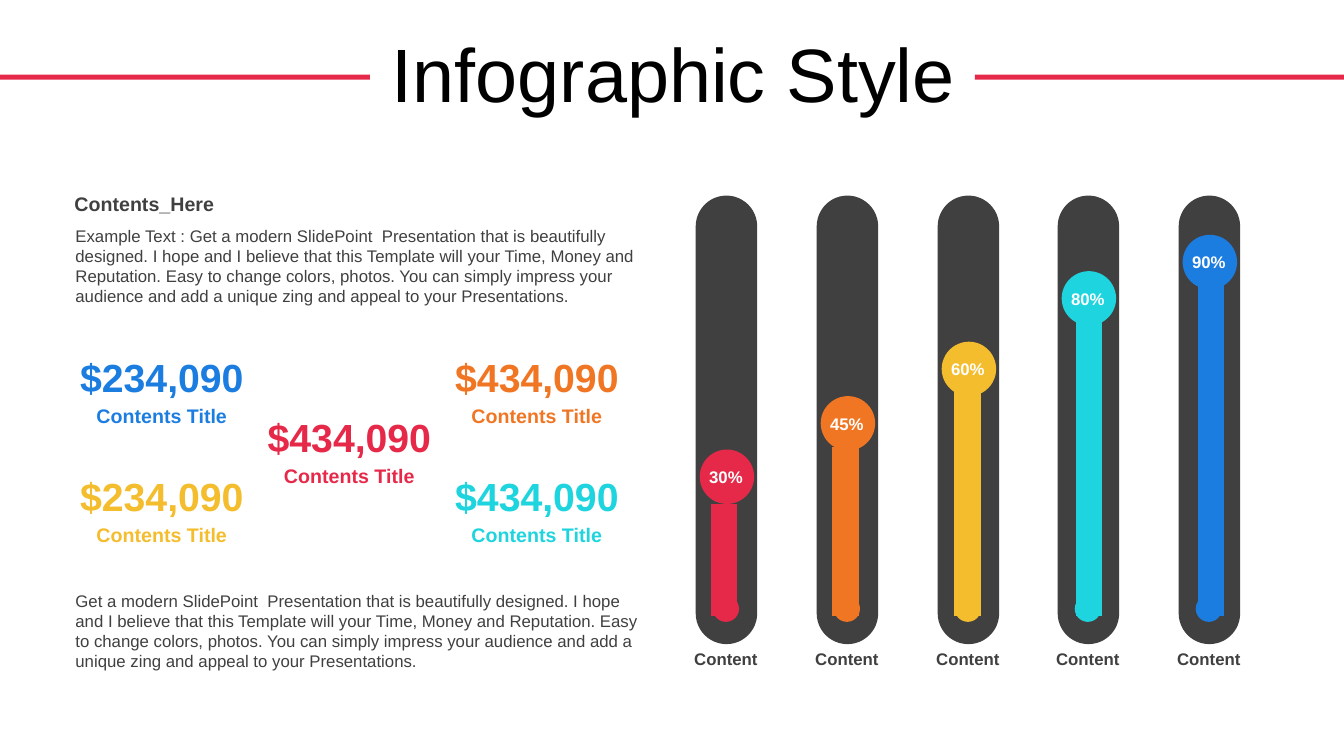
from lxml.etree import SubElement
from pptx import Presentation
from pptx.chart.data import CategoryChartData
from pptx.dml.color import RGBColor
from pptx.enum.chart import XL_CHART_TYPE as ChartType
from pptx.enum.shapes import MSO_SHAPE as Preset
from pptx.enum.text import MSO_ANCHOR as Anchor, MSO_AUTO_SIZE as AutoSize, PP_ALIGN as Align
from pptx.oxml.ns import qn
from pptx.util import Pt

EMU_PER_PX = 9144
RED = RGBColor(0xE6, 0x29, 0x49)
ORANGE = RGBColor(0xF0, 0x76, 0x24)
YELLOW = RGBColor(0xF4, 0xBD, 0x2D)
CYAN = RGBColor(0x1E, 0xD4, 0xDE)
BLUE = RGBColor(0x1C, 0x7D, 0xE1)
GREY = RGBColor(0x40, 0x40, 0x40)
BLACK = RGBColor(0, 0, 0)
WHITE = RGBColor(0xFF, 0xFF, 0xFF)

PITCH = 119.75
GAUGES = [
    ("30%", 33, 446, RED),
    ("45%", 50, 393, ORANGE),
    ("60%", 67, 339, YELLOW),
    ("80%", 89, 269, CYAN),
    ("90%", 100, 233, BLUE),
]
AMOUNTS = [
    ("$234,090", 64, 346, BLUE),
    ("$434,090", 436, 346, ORANGE),
    ("$234,090", 64, 464, YELLOW),
    ("$434,090", 250, 405, RED),
    ("$434,090", 436, 464, CYAN),
]
BODY = (
    "Get a modern SlidePoint  Presentation that is beautifully designed. "
    "I hope and I believe that this Template will your Time, Money and Reputation. "
    "Easy to change colors, photos. You can simply impress your audience "
    "and add a unique zing and appeal to your Presentations."
)


class SlideBuilder:
    """Draws styled elements on one slide, with lengths in px."""

    def __init__(self, slide, font="Arial"):
        self.shapes = slide.shapes
        self.font = font

    def box(self, *lengths):
        return [length * EMU_PER_PX for length in lengths]

    def shape(self, preset, left, top, width, height, color):
        shape = self.shapes.add_shape(preset, *self.box(left, top, width, height))
        shape.shadow.inherit = False
        shape.fill.solid()
        shape.fill.fore_color.rgb = color
        shape.line.fill.background()
        return shape

    def text(self, text, left, top, width, height, size, color,
             bold=False, align=Align.CENTER, anchor=Anchor.TOP):
        frame = self.shapes.add_textbox(*self.box(left, top, width, height)).text_frame
        frame.word_wrap = True
        frame.auto_size = AutoSize.SHAPE_TO_FIT_TEXT
        frame.vertical_anchor = anchor
        paragraph = frame.paragraphs[0]
        paragraph.alignment = align
        run = paragraph.add_run()
        run.text = text
        run.font.name = self.font
        run.font.size = Pt(size)
        run.font.bold = bold
        run.font.color.rgb = color
        return paragraph

    def column_chart(self, left, top, width, height, values, colors, layout):
        data = CategoryChartData()
        data.categories = [str(number + 1) for number in range(len(values))]
        data.add_series("Series 1", values)
        chart = self.shapes.add_chart(
            ChartType.COLUMN_STACKED, *self.box(left, top, width, height), data).chart
        chart.has_title = False
        chart.has_legend = False
        chart.font.name = self.font
        chart.font.size = Pt(18)
        chart.font.color.rgb = BLACK
        chart.category_axis.visible = False
        value_axis = chart.value_axis
        value_axis.visible = False
        value_axis.has_major_gridlines = False
        value_axis.minimum_scale = 0
        value_axis.maximum_scale = 100
        plot = chart.plots[0]
        plot.gap_width = 360
        plot.overlap = 100
        plot.vary_by_categories = False
        for index, color in enumerate(colors):
            fill = plot.series[0].points[index].format.fill
            fill.solid()
            fill.fore_color.rgb = color
        self.place_plot(chart, layout)

    def place_plot(self, chart, layout):
        plot_area = chart.element.find(".//" + qn("c:plotArea"))
        holder = plot_area.find(qn("c:layout"))
        if holder is None:
            holder = SubElement(plot_area, qn("c:layout"))
            plot_area.insert(0, holder)
        manual = SubElement(holder, qn("c:manualLayout"))
        settings = [("layoutTarget", "inner"), ("xMode", "edge"), ("yMode", "edge")]
        settings += zip("xywh", layout)
        for name, value in settings:
            SubElement(manual, qn("c:" + name)).set("val", str(value))


def main():
    presentation = Presentation()
    presentation.slide_width = 1333 * EMU_PER_PX
    presentation.slide_height = 750 * EMU_PER_PX
    builder = SlideBuilder(presentation.slides.add_slide(presentation.slide_layouts[6]))

    for left in (0, 967):
        builder.shape(Preset.RECTANGLE, left, 74, 367, 5, RED)
    title = builder.text("Infographic Style", 35, 31, 1266, 92, 54, BLACK, anchor=Anchor.MIDDLE)
    title.line_spacing = 0.9
    title.space_before = Pt(10)

    offsets = [round(index * PITCH) for index in range(len(GAUGES))]
    for offset in offsets:
        track = builder.shape(Preset.ROUNDED_RECTANGLE, 690 + offset, 194, 61, 445, GREY)
        track.adjustments[0] = 0.5
    builder.column_chart(
        645, 233, 629, 386,
        [value for _, value, _, _ in GAUGES],
        [color for _, _, _, color in GAUGES],
        (0.02, 0.11, 0.96, 0.87))
    for offset, (percent, _, top, color) in zip(offsets, GAUGES):
        builder.shape(Preset.OVAL, 694 + offset, top, 54, 54, color)
        builder.shape(Preset.OVAL, 707 + offset, 591, 26, 26, color)
        builder.text(percent, 692 + offset, top + 12, 56, 30, 12, WHITE, True,
                     anchor=Anchor.MIDDLE)
        builder.text("Content", 677 + offset, 639, 86, 30, 12, GREY, True,
                     anchor=Anchor.MIDDLE)

    builder.text("Contents_Here", 64, 186, 587, 34, 14, GREY, True, Align.LEFT)
    for text, top in (("Example Text : " + BODY, 219), (BODY, 581)):
        builder.text(text, 65, top, 587, 91, 12, GREY, align=Align.LEFT)
    for amount, left, top, color in AMOUNTS:
        builder.text(amount, left, top, 193, 57, 28, color, True)
        builder.text("Contents Title", left, top + 50, 193, 34, 14, color, True)

    presentation.save("out.pptx")


if __name__ == "__main__":
    main()
